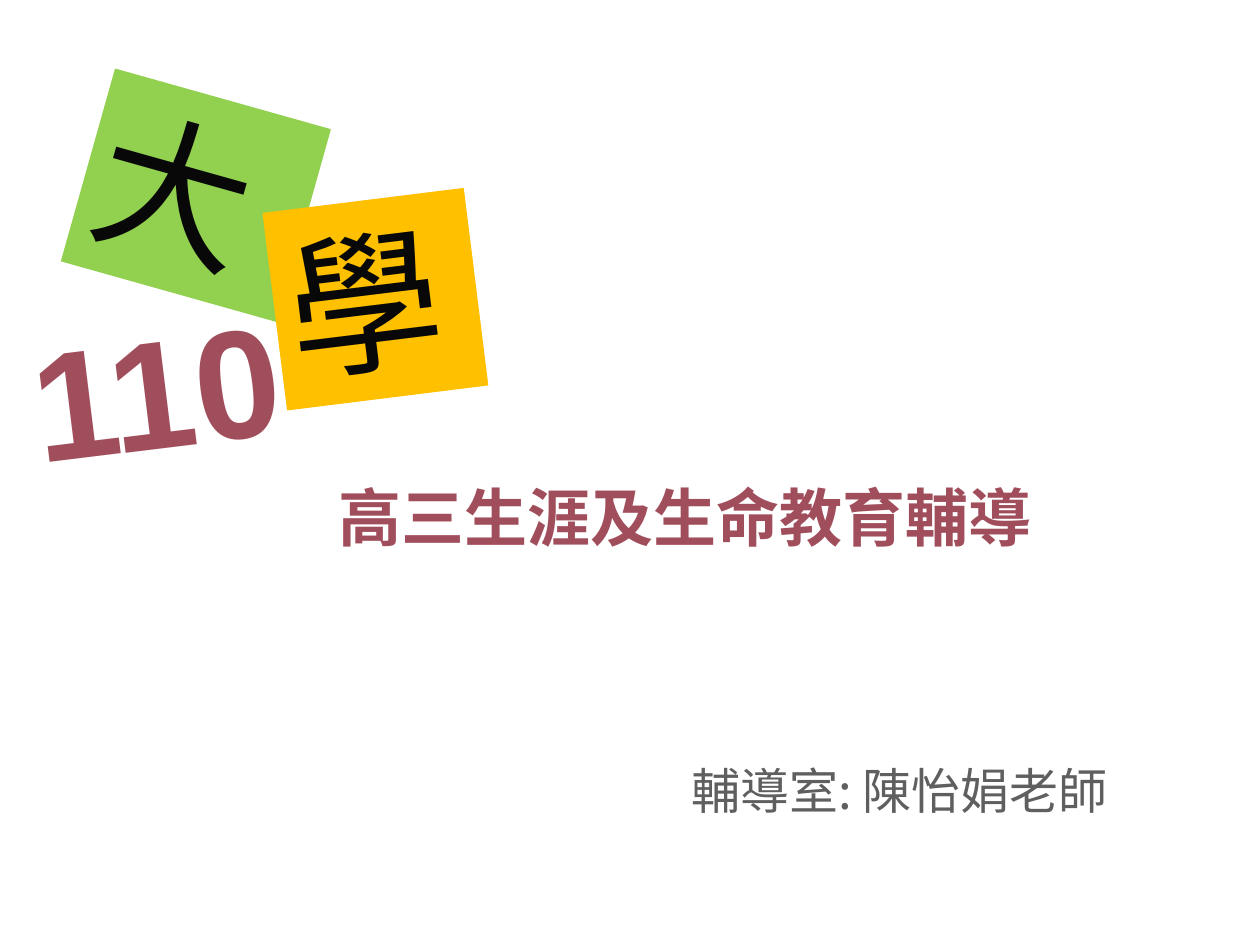
import pptx
import pptx.util
import pptx.dml.color
import pptx.enum.shapes
import pptx.enum.text
import pptx.oxml.ns
import lxml.etree

Inches = pptx.util.Inches
ALIGN = pptx.enum.text.PP_ALIGN
ANCHOR = pptx.enum.text.MSO_ANCHOR

THEME = {
    "wine": "A14E5C", "gray": "5F5F5F", "ink": "080808",
    "green": "92D050", "gold": "FFC000",
    "cjk": "Noto Sans CJK JP", "latin": "Arial",
    "huge": 88, "title": 36, "name": 28,
}

# text, (left, top, width, height), turn, fill
TILES = [
    ("大", (0.67, 0.76, 1.77, 1.58), 15.7, "green"),
    ("學", (2.18, 1.59, 1.6, 1.57), -7.1, "gold"),
]
TITLE = ("高三生涯及生命教育輔導", (2.01, 3.75, 6.85, 1.42))
TEACHER = ("輔導室: 陳怡娟老師", (5.39, 5.56, 4.09, 1.42))
YEAR = ("110", (0.12, 2.15, 2.2, 1.58), -7.1)


def color(key):
    return pptx.dml.color.RGBColor.from_string(THEME[key])


def write(shape, text, size, ink, face="cjk", bold=False,
          align=ALIGN.LEFT, anchor=ANCHOR.TOP, wrap=True):
    """Put one styled paragraph in the shape, with the face for all scripts."""
    frame = shape.text_frame
    frame.word_wrap = wrap
    frame.vertical_anchor = anchor
    para = frame.paragraphs[0]
    para.text = text
    para.alignment = align
    font = para.font
    font.size = pptx.util.Pt(THEME[size])
    font.bold = bold
    font.color.rgb = color(ink)
    font.name = THEME[face]
    props = para._p.pPr.find(pptx.oxml.ns.qn("a:defRPr"))
    east = lxml.etree.SubElement(props, pptx.oxml.ns.qn("a:ea"))
    east.set("typeface", THEME[face])


def add_tile(slide, text, box, turn, fill):
    tile = slide.shapes.add_shape(
        pptx.enum.shapes.MSO_SHAPE.RECTANGLE, *map(Inches, box))
    tile.rotation = turn
    tile.shadow.inherit = False
    tile.fill.solid()
    tile.fill.fore_color.rgb = color(fill)
    tile.line.color.rgb = color(fill)
    tile.line.width = pptx.util.Pt(0.75)
    write(tile, text, "huge", "ink")


def add_text(slide, text, box, turn=0, **style):
    shape = slide.shapes.add_textbox(*map(Inches, box))
    shape.rotation = turn
    write(shape, text, **style)
    return shape


def main():
    deck = pptx.Presentation()
    deck.slide_width, deck.slide_height = Inches(10), Inches(7.5)
    slide = deck.slides.add_slide(deck.slide_layouts[6])

    add_text(slide, *TITLE, size="title", ink="wine", bold=True,
             align=ALIGN.CENTER, wrap=False)
    add_text(slide, *TEACHER, size="name", ink="gray", anchor=ANCHOR.MIDDLE)
    for tile in TILES:
        add_tile(slide, *tile)
    year = add_text(slide, *YEAR, size="huge", ink="wine", face="latin",
                    bold=True, align=ALIGN.CENTER, wrap=False)
    year.text_frame.margin_top = Inches(0.19)

    deck.save("out.pptx")


if __name__ == "__main__":
    main()
